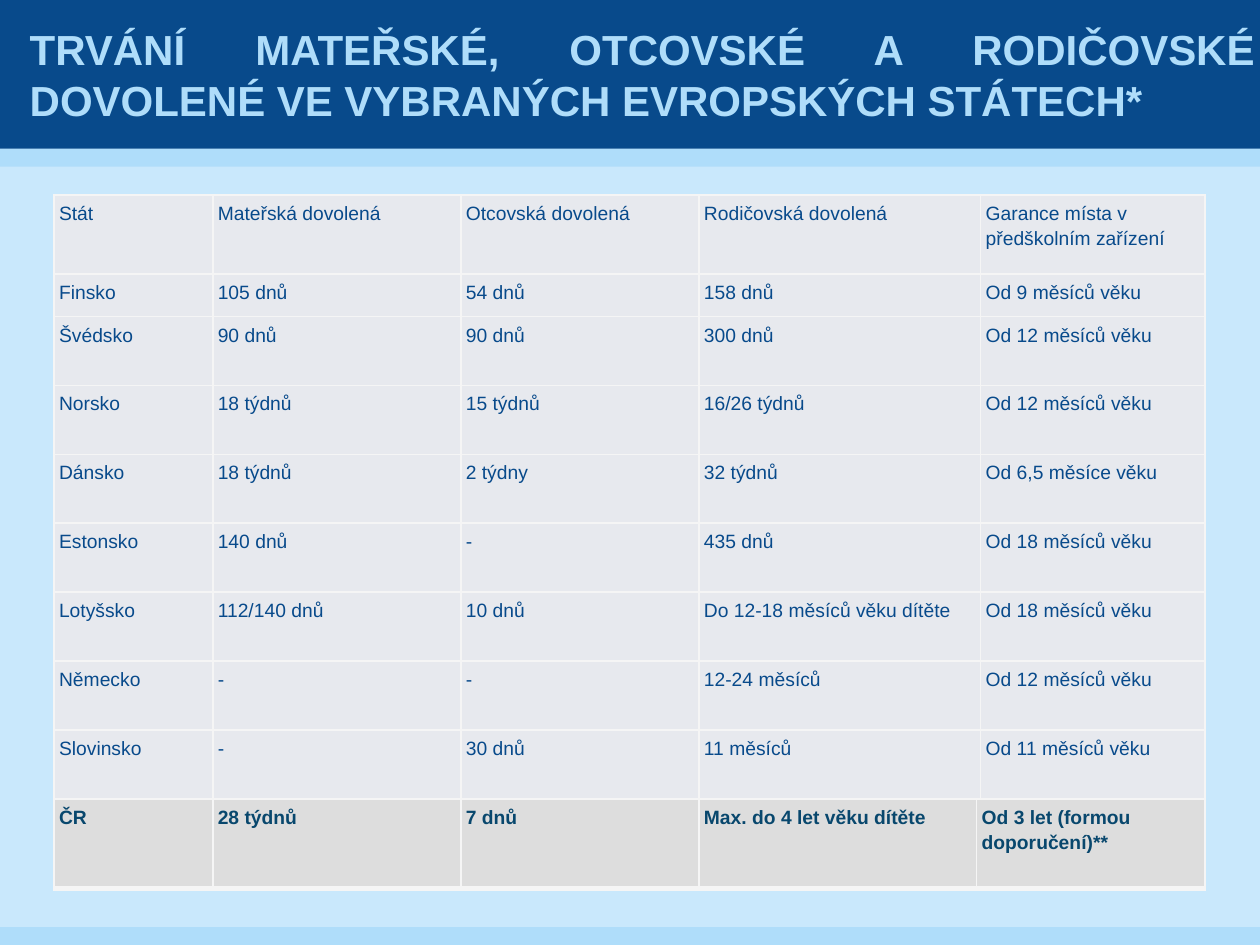
from dataclasses import dataclass

from lxml import etree
from pptx import Presentation
from pptx.dml.color import RGBColor
from pptx.enum.shapes import MSO_SHAPE
from pptx.enum.text import MSO_ANCHOR, PP_ALIGN
from pptx.oxml.ns import qn
from pptx.util import Cm, Pt

RECTANGLE = MSO_SHAPE.RECTANGLE
MIDDLE = MSO_ANCHOR.MIDDLE
JUSTIFY = PP_ALIGN.JUSTIFY
LEFT = PP_ALIGN.LEFT


@dataclass(frozen=True)
class Theme:
    font: str = "Arial"
    navy: str = "084A8B"
    sky: str = "AFDDFA"
    page: str = "C9E8FC"
    row: str = "E7E9EE"
    summary_row: str = "DDDDDD"
    summary_text: str = "08476D"
    border: str = "F5F5F5"
    title_size: int = 24
    table_size: int = 11


THEME = Theme()
PAGE_WIDTH, PAGE_HEIGHT = 25.4, 19.05
HEADER_HEIGHT, STRIPE_HEIGHT = 3, 0.36
TABLE_LEFT, TABLE_TOP = 1.09, 3.93
INSET = 0.1

TITLE = "TRVÁNÍ MATEŘSKÉ, OTCOVSKÉ A RODIČOVSKÉ DOVOLENÉ VE VYBRANÝCH EVROPSKÝCH STÁTECH*"
LEAVE_ROWS = [
    ["Stát", "Mateřská dovolená", "Otcovská dovolená", "Rodičovská dovolená",
     "Garance místa v předškolním zařízení"],
    ["Finsko", "105 dnů", "54 dnů", "158 dnů", "Od 9 měsíců věku"],
    ["Švédsko", "90 dnů", "90 dnů", "300 dnů", "Od 12 měsíců věku"],
    ["Norsko", "18 týdnů", "15 týdnů", "16/26 týdnů", "Od 12 měsíců věku"],
    ["Dánsko", "18 týdnů", "2 týdny", "32 týdnů", "Od 6,5 měsíce věku"],
    ["Estonsko", "140 dnů", "-", "435 dnů", "Od 18 měsíců věku"],
    ["Lotyšsko", "112/140 dnů", "10 dnů", "Do 12-18 měsíců věku dítěte", "Od 18 měsíců věku"],
    ["Německo", "-", "-", "12-24 měsíců", "Od 12 měsíců věku"],
    ["Slovinsko", "-", "30 dnů", "11 měsíců", "Od 11 měsíců věku"],
]
CZECH_ROW = ["ČR", "28 týdnů", "7 dnů", "Max. do 4 let věku dítěte",
             "Od 3 let (formou doporučení)**"]
LEAVE_COLUMNS = [3.2, 5, 4.8, 5.68, 4.52]
CZECH_COLUMNS = [3.2, 5, 4.8, 5.6, 4.6]
LEAVE_HEIGHTS = [1.59, 0.86] + [1.39] * 7
CZECH_HEIGHT = 1.8


def apply(target, values):
    for name, value in values.items():
        setattr(target, name, value)


def write(para, text, color, size, bold, **para_format):
    apply(para, para_format)
    span = para.add_run()
    span.text = text
    apply(span.font, {"name": THEME.font, "size": Pt(size), "bold": bold})
    span.font.color.rgb = RGBColor.from_string(color)


def add_band(page, top, height, color):
    band = page.shapes.add_shape(RECTANGLE, 0, Cm(top), Cm(PAGE_WIDTH), Cm(height))
    band.shadow.inherit = False
    band.fill.solid()
    band.fill.fore_color.rgb = RGBColor.from_string(color)
    band.line.fill.background()


def add_header(page, top, height):
    add_band(page, top + height, STRIPE_HEIGHT, THEME.sky)
    add_band(page, top, height, THEME.navy)
    left = 0.5
    box = page.shapes.add_textbox(Cm(left), Cm(top), Cm(PAGE_WIDTH - left), Cm(height))
    frame = box.text_frame
    apply(frame, {"word_wrap": True, "vertical_anchor": MIDDLE,
                  "margin_left": Cm(INSET), "margin_right": Cm(INSET),
                  "margin_top": 0, "margin_bottom": 0})
    write(frame.paragraphs[0], TITLE, THEME.sky, THEME.title_size, True, alignment=JUSTIFY)


def set_borders(cell, bottom_width):
    properties = cell._tc.get_or_add_tcPr()
    for side, width in {"L": 1, "R": 1, "T": 1, "B": bottom_width}.items():
        line = etree.SubElement(properties, qn(f"a:ln{side}"), w=str(Pt(width)))
        fill = etree.SubElement(line, qn("a:solidFill"))
        etree.SubElement(fill, qn("a:srgbClr"), val=THEME.border)


def add_leave_table(page, left, top, rows, columns, heights, fill, color,
                    bold=False, bottom_width=1, left_aligned=()):
    """Draw a table; left_aligned holds the (row, column) cells not justified."""
    frame = page.shapes.add_table(len(rows), len(columns), Cm(left), Cm(top),
                                  Cm(sum(columns)), Cm(sum(heights)))
    table = frame.table
    apply(table, {"first_row": False, "horz_banding": False})
    for column, width in zip(table.columns, columns):
        column.width = Cm(width)
    for row, height in zip(table.rows, heights):
        row.height = Cm(height)
    for row_index, texts in enumerate(rows):
        for column_index, text in enumerate(texts):
            cell = table.cell(row_index, column_index)
            apply(cell, {f"margin_{side}": Cm(INSET)
                         for side in ("left", "right", "top", "bottom")})
            set_borders(cell, bottom_width)
            cell.fill.solid()
            cell.fill.fore_color.rgb = RGBColor.from_string(fill)
            is_left = (row_index, column_index) in left_aligned
            write(cell.text_frame.paragraphs[0], text, color, THEME.table_size, bold,
                  alignment=LEFT if is_left else JUSTIFY, line_spacing=1.15,
                  space_before=Pt(6), space_after=Pt(9))


def main():
    deck = Presentation()
    apply(deck, {"slide_width": Cm(PAGE_WIDTH), "slide_height": Cm(PAGE_HEIGHT)})
    page = deck.slides.add_slide(deck.slide_layouts[6])
    page.background.fill.solid()
    page.background.fill.fore_color.rgb = RGBColor.from_string(THEME.page)

    # Header and footer bands
    add_header(page, 0, HEADER_HEIGHT)
    add_band(page, PAGE_HEIGHT - STRIPE_HEIGHT, STRIPE_HEIGHT, THEME.sky)

    # Countries, with the Czech summary row directly below
    add_leave_table(page, TABLE_LEFT, TABLE_TOP, LEAVE_ROWS, LEAVE_COLUMNS, LEAVE_HEIGHTS,
                    THEME.row, THEME.navy,
                    left_aligned=[(0, column) for column in range(len(LEAVE_COLUMNS))])
    add_leave_table(page, TABLE_LEFT, TABLE_TOP + sum(LEAVE_HEIGHTS), [CZECH_ROW],
                    CZECH_COLUMNS, [CZECH_HEIGHT], THEME.summary_row, THEME.summary_text,
                    bold=True, bottom_width=3, left_aligned=[(0, 4)])

    deck.save("out.pptx")


if __name__ == "__main__":
    main()
